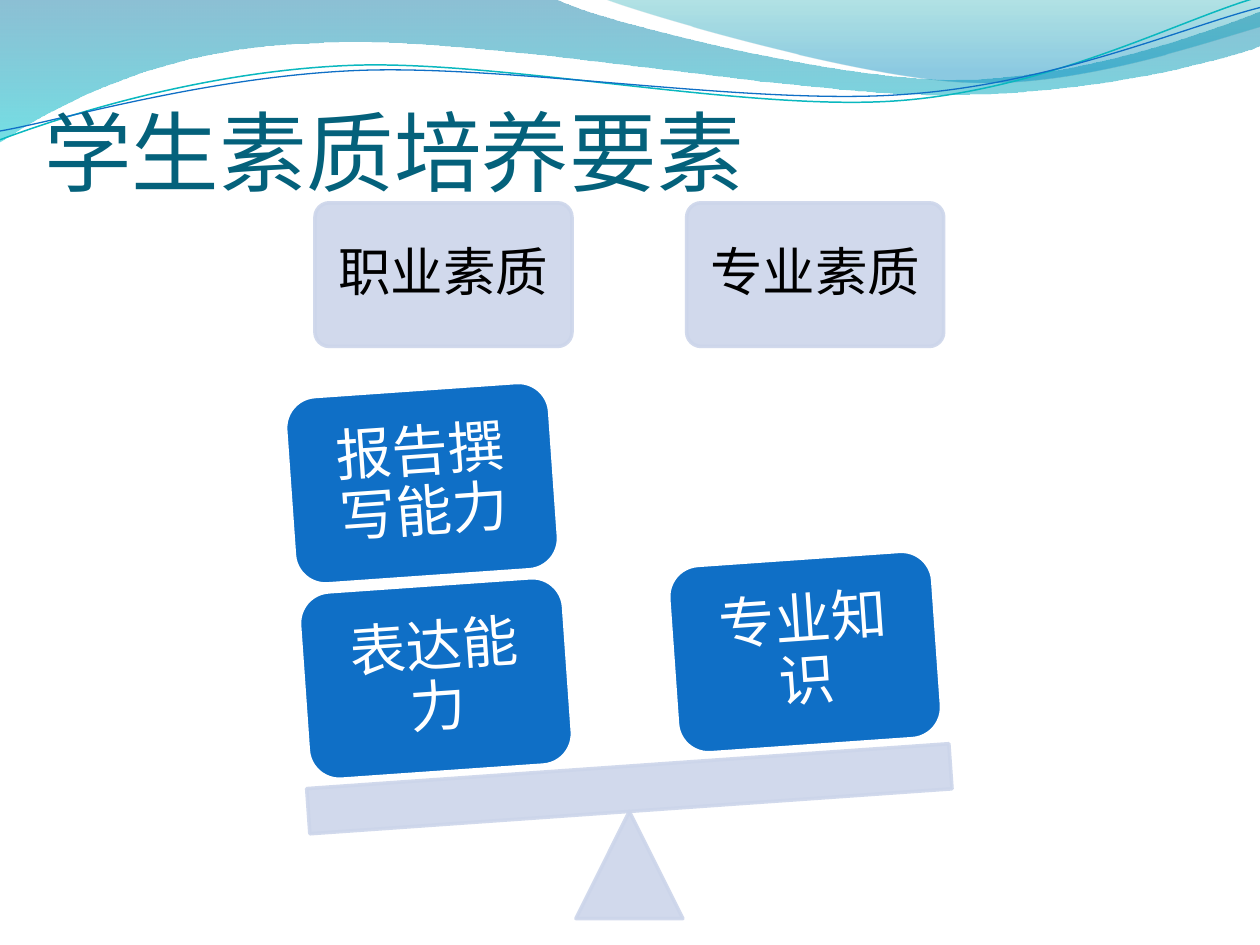
from dataclasses import dataclass

import pptx
import pptx.dml.color
import pptx.enum.shapes
import pptx.enum.text
import pptx.oxml
import pptx.oxml.ns
import pptx.util

Inches = pptx.util.Inches
Pt = pptx.util.Pt
RGBColor = pptx.dml.color.RGBColor
ShapeKind = pptx.enum.shapes.MSO_SHAPE
Anchor = pptx.enum.text.MSO_ANCHOR
Align = pptx.enum.text.PP_ALIGN
qn = pptx.oxml.ns.qn

TITLE_TEAL = RGBColor(0x04, 0x61, 0x7B)
WAVE_TEAL = RGBColor(0x0A, 0xB8, 0xBF)
BLUE = RGBColor(0x0F, 0x6F, 0xC6)
PALE = RGBColor(0xCC, 0xD5, 0xEA)
WHITE = RGBColor(0xFF, 0xFF, 0xFF)
BLACK = RGBColor(0, 0, 0)
TILT = -4


@dataclass(frozen=True)
class Stop:
    position: float
    color: RGBColor
    alpha: int


@dataclass(frozen=True)
class Wave:
    start: tuple[float, float]
    pieces: tuple[tuple[float, ...], ...]
    stops: tuple[Stop, ...] = ()
    line_color: RGBColor | None = None
    line_width: float = 0


@dataclass(frozen=True)
class Block:
    left: float
    top: float
    width: float
    height: float
    kind: ShapeKind
    fill: RGBColor
    line: RGBColor
    alpha: int = 100
    rotation: float = 0
    corner: float | None = None
    text: str = ""
    size: int = 0
    color: RGBColor = BLACK
    inset: float = 0


def label(left: float, text: str) -> Block:
    return Block(left, 1.61, 2.04, 1.14, ShapeKind.ROUNDED_RECTANGLE, PALE, PALE, 90,
                 corner=0.1, text=text, size=30, inset=0.12)


def weight(left: float, top: float, text: str) -> Block:
    return Block(left, top, 2.1, 1.49, ShapeKind.ROUNDED_RECTANGLE, BLUE, WHITE,
                 rotation=TILT, text=text, size=32, color=WHITE, inset=0.13)


WAVES = (
    Wave((0, 0),
         ((4.4, -0.01), (4.76, 0.17, 6.64, 0.63, 7.58, 0.63),
          (8.53, 0.63, 9.58, 0.26, 10, 0.09), (10.01, 0.36),
          (9.83, 0.44, 8.7, 0.76, 7.46, 0.75), (6.22, 0.75, 3.82, 0.28, 2.57, 0.34),
          (1.29, 0.36, 0.46, 0.83, -0.01, 1.13), (0, 0)),
         (Stop(0, RGBColor(0x00, 0x74, 0xA1), 45), Stop(1, RGBColor(0x00, 0xC6, 0xCF), 55))),
    Wave((4.79, -0.01),
         ((5.09, 0.11, 6.82, 0.62, 7.69, 0.65), (8.56, 0.69, 9.61, 0.32, 10, 0.21),
          (10, 0), (4.79, -0.01)),
         (Stop(0, RGBColor(0x00, 0xA1, 0xA9), 30), Stop(0.8, RGBColor(0x00, 0x8B, 0xBF), 45))),
    Wave((0, 1.11),
         ((0.48, 0.93, 1.58, 0.57, 2.77, 0.52), (3.95, 0.47, 5.93, 0.89, 7.13, 0.8),
          (8.33, 0.71, 9.38, 0.15, 9.98, -0.02)),
         line_color=WAVE_TEAL, line_width=0.85),
    Wave((0, 1.04),
         ((0.47, 0.96, 1.64, 0.61, 2.83, 0.56), (4.03, 0.51, 5.97, 0.84, 7.17, 0.75),
          (8.36, 0.67, 9.41, 0.21, 10, 0.06)),
         line_color=BLUE, line_width=0.75),
)

BLOCKS = (
    label(2.5, "职业素质"),
    label(5.45, "专业素质"),
    Block(4.57, 6.44, 0.85, 0.85, ShapeKind.ISOSCELES_TRIANGLE, PALE, PALE, 90),
    Block(2.44, 6.08, 5.11, 0.36, ShapeKind.RECTANGLE, PALE, PALE, 90, TILT),
    weight(2.41, 4.64, "表达能力"),
    weight(2.3, 3.09, "报告撰写能力"),
    weight(5.34, 4.43, "专业知识"),
)


def set_alphas(shape, alphas: list[int]) -> None:
    colors = list(shape._element.spPr.iter(qn("a:srgbClr")))
    for color, alpha in zip(colors, alphas):
        namespace = pptx.oxml.ns.nsdecls("a")
        color.append(pptx.oxml.parse_xml(f'<a:alpha {namespace} val="{alpha * 1000}"/>'))


def bend(shape, wave: Wave) -> None:
    segments = iter(list(shape._element.spPr.iter(qn("a:lnTo"))))
    for piece in wave.pieces:
        first = next(segments)
        if len(piece) == 2:
            continue
        curve = first.makeelement(qn("a:cubicBezTo"))
        first.addprevious(curve)
        for segment in (first, next(segments), next(segments)):
            curve.append(segment[0])
            segment.getparent().remove(segment)


def draw_wave(slide, wave: Wave) -> None:
    builder = slide.shapes.build_freeform(*map(Inches, wave.start))
    points = [(Inches(piece[i]), Inches(piece[i + 1]))
              for piece in wave.pieces for i in range(0, len(piece), 2)]
    builder.add_line_segments(points, close=bool(wave.stops))
    shape = builder.convert_to_shape()
    bend(shape, wave)
    shape.shadow.inherit = False
    if wave.stops:
        shape.fill.gradient()
        shape.fill.gradient_angle = 270
        for target, stop in zip(shape.fill.gradient_stops, wave.stops):
            target.position = stop.position
            target.color.rgb = stop.color
        set_alphas(shape, [stop.alpha for stop in wave.stops])
        shape.line.fill.background()
    else:
        shape.fill.background()
        shape.line.color.rgb = wave.line_color
        shape.line.width = Pt(wave.line_width)


def add_text(paragraph, text: str, size: int, font: str, color: RGBColor) -> None:
    run = paragraph.add_run()
    run.text = text
    run.font.size = Pt(size)
    run.font.name = font
    run.font.color.rgb = color


def draw_block(slide, block: Block) -> None:
    shape = slide.shapes.add_shape(block.kind, Inches(block.left), Inches(block.top),
                                   Inches(block.width), Inches(block.height))
    shape.shadow.inherit = False
    shape.rotation = block.rotation
    if block.corner is not None:
        shape.adjustments[0] = block.corner
    shape.fill.solid()
    shape.fill.fore_color.rgb = block.fill
    shape.line.color.rgb = block.line
    shape.line.width = Pt(2)
    if block.alpha < 100:
        set_alphas(shape, [block.alpha] * 2)
    if block.text:
        frame = shape.text_frame
        frame.word_wrap = True
        frame.vertical_anchor = Anchor.MIDDLE
        frame.margin_left = frame.margin_right = Inches(block.inset)
        frame.margin_top = frame.margin_bottom = Inches(block.inset)
        paragraph = frame.paragraphs[0]
        paragraph.alignment = Align.CENTER
        paragraph.line_spacing = 0.9
        add_text(paragraph, block.text, block.size, "Vollkorn", block.color)


def draw_title(slide, text: str) -> None:
    title = slide.shapes.add_textbox(Inches(0.35), Inches(0.36), Inches(9), Inches(1.25))
    frame = title.text_frame
    frame.word_wrap = True
    frame.vertical_anchor = Anchor.BOTTOM
    frame.margin_left = frame.margin_right = frame.margin_bottom = 0
    frame.margin_top = Inches(0.05)
    add_text(frame.paragraphs[0], text, 50, "Calibri", TITLE_TEAL)


def main() -> None:
    deck = pptx.Presentation()
    deck.slide_width = Inches(10)
    deck.slide_height = Inches(7.5)
    slide = deck.slides.add_slide(deck.slide_layouts[6])
    for wave in WAVES:
        draw_wave(slide, wave)
    draw_title(slide, "学生素质培养要素")
    for block in BLOCKS:
        draw_block(slide, block)
    deck.save("out.pptx")


if __name__ == "__main__":
    main()
